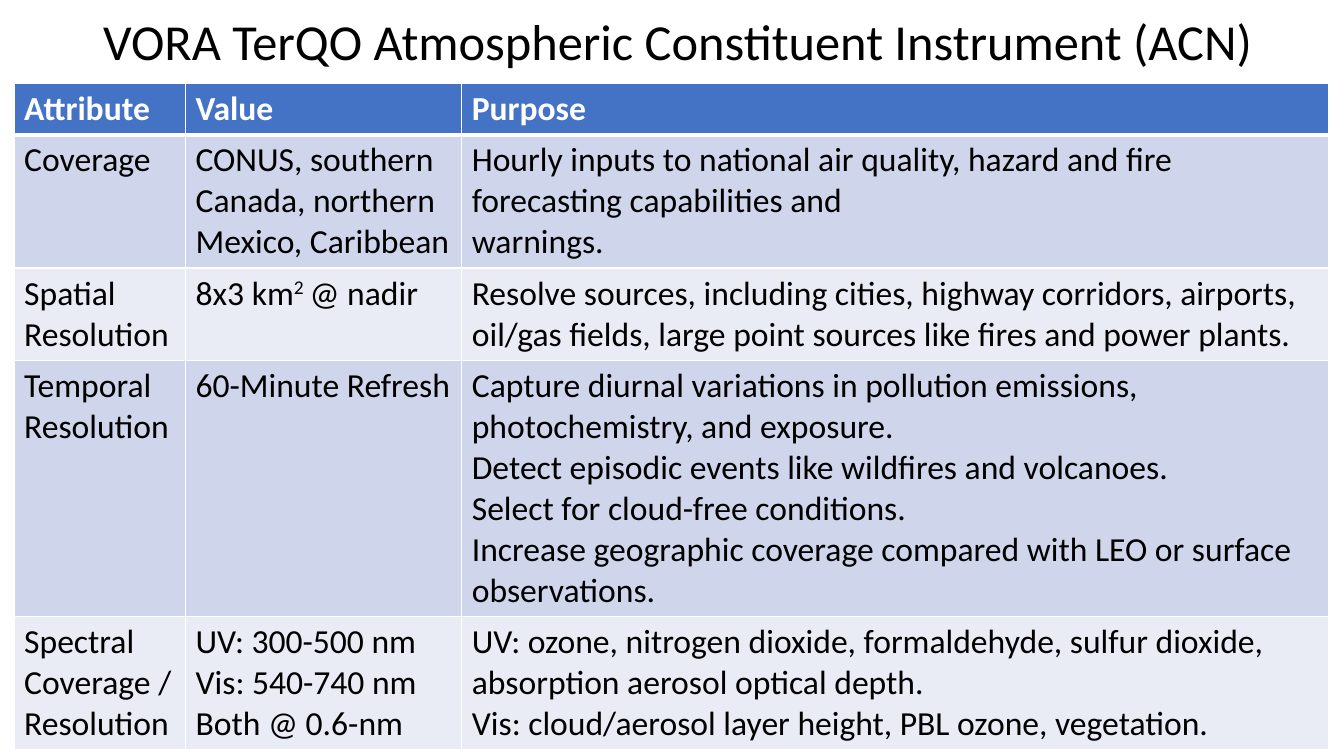
from lxml.etree import SubElement
from pptx import Presentation
from pptx.dml.color import RGBColor
from pptx.enum.text import MSO_ANCHOR as Anchor, PP_ALIGN as Align
from pptx.oxml.ns import qn
from pptx.util import Inches, Pt

COLORS = {
    "text": "000000",
    "white": "FFFFFF",
    "header": "4472C4",
    "odd": "CFD5EA",
    "even": "E9EBF5",
}
COLUMN_WIDTHS = [17, 27.4, 86]
ROW_HEIGHTS = [5.1, 13.2, 9.2, 25.4, 13.2]
SUPERSCRIPT = 30000
ATTRIBUTES = [
    ["Attribute", "Value", "Purpose"],
    [
        "Coverage",
        "CONUS, southern\nCanada, northern\nMexico, Caribbean",
        "Hourly inputs to national air quality, hazard and fire "
        "forecasting capabilities and\nwarnings.",
    ],
    [
        "Spatial Resolution",
        [("8x3 km", 24, 0), ("2", 24, SUPERSCRIPT), (" ", 18, 0), ("@ nadir", 24, 0)],
        "Resolve sources, including cities, highway corridors, airports, "
        "oil/gas fields, large point sources like fires and power plants.",
    ],
    [
        "Temporal\nResolution",
        "60-Minute Refresh",
        "Capture diurnal variations in pollution emissions, "
        "photochemistry, and exposure.\n"
        "Detect episodic events like wildfires and volcanoes.\n"
        "Select for cloud-free conditions.\n"
        "Increase geographic coverage compared with LEO or surface observations.",
    ],
    [
        "Spectral\nCoverage /\nResolution",
        "UV: 300-500 nm\nVis: 540-740 nm\nBoth @ 0.6-nm",
        "UV: ozone, nitrogen dioxide, formaldehyde, sulfur dioxide, "
        "absorption aerosol optical depth.\n"
        "Vis: cloud/aerosol layer height, PBL ozone, vegetation.",
    ],
]


class SlideBuilder:
    font = "Calibri"
    unit = Inches(0.1)

    def __init__(self, presentation):
        self.slide = presentation.slides.add_slide(presentation.slide_layouts[6])

    def grid(self, *counts):
        return [round(count * self.unit) for count in counts]

    def add_run(self, paragraph, text, size, color, bold=False, baseline=0):
        run = paragraph.add_run()
        run.text = text
        values = {"name": self.font, "size": Pt(size), "bold": bold}
        for name, value in values.items():
            setattr(run.font, name, value)
        run.font.color.rgb = RGBColor.from_string(COLORS[color])
        if baseline:
            run._r.get_or_add_rPr().set("baseline", str(baseline))

    def title(self, text, *place):
        frame = self.slide.shapes.add_textbox(*self.grid(*place)).text_frame
        frame.word_wrap = True
        frame.vertical_anchor = Anchor.MIDDLE
        paragraph = frame.paragraphs[0]
        for name, value in {"alignment": Align.CENTER, "line_spacing": 0.9}.items():
            setattr(paragraph, name, value)
        self.add_run(paragraph, text, 36, "text")

    def borders(self, cell, widths):
        properties = cell._tc.get_or_add_tcPr()
        for index, (side, width) in enumerate(widths.items()):
            line = SubElement(properties, qn(f"a:ln{side}"), w=str(Pt(width)))
            fill = SubElement(line, qn("a:solidFill"))
            SubElement(fill, qn("a:srgbClr"), val=COLORS["white"])
            properties.insert(index, line)

    def fill_cell(self, cell, content, row):
        header = row == 0
        fill = "header" if header else ("even", "odd")[row % 2]
        cell.fill.solid()
        cell.fill.fore_color.rgb = RGBColor.from_string(COLORS[fill])
        self.borders(cell, {"L": 1, "R": 1, "T": 3 if row == 1 else 1, "B": 3 if header else 1})
        if isinstance(content, str):
            lines = [[(line, 24, 0)] for line in content.split("\n")]
        else:
            lines = [content]
        frame = cell.text_frame
        for index, runs in enumerate(lines):
            paragraph = frame.add_paragraph() if index else frame.paragraphs[0]
            for text, size, baseline in runs:
                self.add_run(paragraph, text, size, "white" if header else "text", header, baseline)

    def table(self, rows, left, top, widths, heights):
        place = self.grid(left, top, sum(widths), sum(heights))
        table = self.slide.shapes.add_table(len(heights), len(widths), *place).table
        for column, width in zip(table.columns, self.grid(*widths)):
            column.width = width
        for row, height in zip(table.rows, self.grid(*heights)):
            row.height = height
        for row, contents in enumerate(rows):
            for column, content in enumerate(contents):
                self.fill_cell(table.cell(row, column), content, row)


def main():
    presentation = Presentation()
    presentation.slide_width = Inches(13.33)
    presentation.slide_height = Inches(7.5)
    builder = SlideBuilder(presentation)
    builder.title("VORA TerQO Atmospheric Constituent Instrument (ACN)", 2.6, 1, 129.3, 6.7)
    builder.table(ATTRIBUTES, 1.4, 8.3, COLUMN_WIDTHS, ROW_HEIGHTS)
    presentation.save("out.pptx")


if __name__ == "__main__":
    main()
